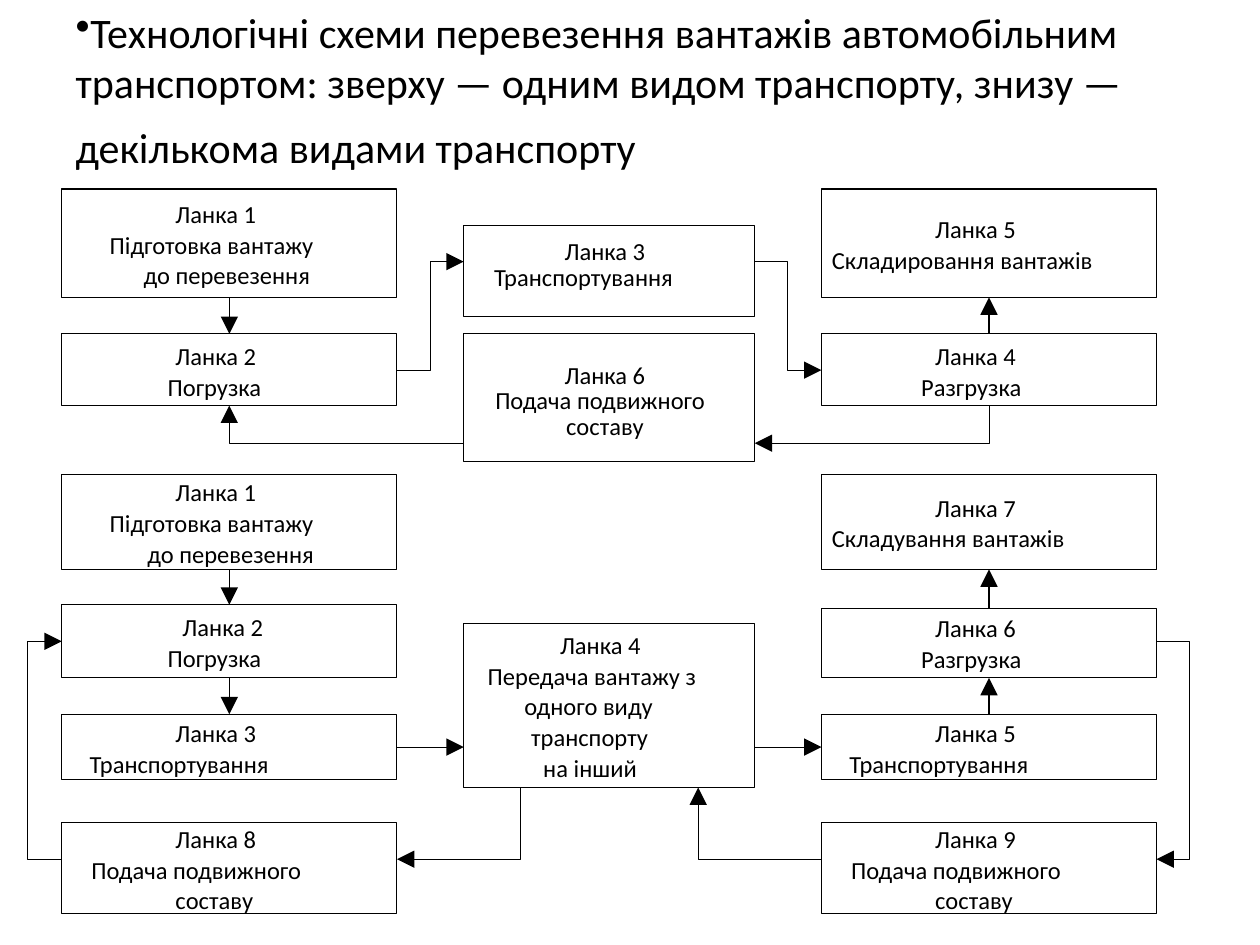
from lxml import etree
from pptx import Presentation
from pptx.dml.color import RGBColor
from pptx.enum.shapes import MSO_CONNECTOR, MSO_SHAPE
from pptx.enum.text import MSO_ANCHOR, MSO_AUTO_SIZE, PP_ALIGN
from pptx.oxml.ns import qn
from pptx.util import Pt

RECTANGLE = MSO_SHAPE.RECTANGLE
STRAIGHT = MSO_CONNECTOR.STRAIGHT
ANCHOR_TOP = MSO_ANCHOR.TOP
NO_AUTOFIT = MSO_AUTO_SIZE.NONE
LEFT_ALIGN = PP_ALIGN.LEFT
TOP, LEFT, BOTTOM, RIGHT = range(4)

COLORS = {"ink": "000000", "paper": "FFFFFF"}
FONT = "Calibri"
LINE_WIDTH = 0.6
NATURAL_PITCH = 17.1  # line height of 14 pt text

# Columns: left edge and width
COL_LEFT, COL_MIDDLE, COL_RIGHT = (35.3, 191.5), (265, 166.3), (469.4, 191.5)
# Rows: top edge and height
STORE, LOAD, CARRY = (108, 62), (190.8, 41), (129, 51.8)
RETURN = (190.8, 72.7)
STORE_2, LOAD_2, UNLOAD_2 = (271.4, 54), (345.6, 41.8), (347.8, 39.6)
CARRY_2, TRANSFER, SUPPLY_2 = (408.2, 37.4), (356.4, 93.6), (470.2, 51.8)


def write(paragraph, text, size=14, color="ink", indent=0, hanging=0, pitch=None):
    """Add a formatted run and set the paragraph's indents and line pitch."""
    run = paragraph.add_run()
    run.text = text
    run.font.name, run.font.size = FONT, Pt(size)
    run.font.color.rgb = RGBColor.from_string(COLORS[color])
    paragraph.alignment = LEFT_ALIGN
    properties = paragraph._p.get_or_add_pPr()
    properties.set("marL", str(Pt(indent)))
    properties.set("indent", str(Pt(-hanging)))
    if pitch:
        paragraph.line_spacing = Pt(pitch)


class Scheme:
    def __init__(self, slide):
        self.slide = slide
        self.ink = RGBColor.from_string(COLORS["ink"])
        self.paper = RGBColor.from_string(COLORS["paper"])

    def title(self, text):
        holder = self.slide.shapes.title
        holder.left, holder.top, holder.width, holder.height = Pt(36), Pt(0), Pt(648), Pt(108)
        frame = holder.text_frame
        frame.word_wrap, frame.auto_size = True, NO_AUTOFIT
        frame.vertical_anchor = ANCHOR_TOP
        paragraph = frame.paragraphs[0]
        write(paragraph, text, size=24, hanging=27)
        write(paragraph, " ", size=32, hanging=27)
        bullet = etree.SubElement(paragraph._p.pPr, qn("a:buChar"))
        bullet.set("char", "•")

    def stage(self, column, row, text_top, lines, pitch=17.5):
        """Draw a box; lines holds (text, indent) pairs."""
        (left, width), (top, height) = column, row
        box = self.slide.shapes.add_shape(RECTANGLE, Pt(left), Pt(top), Pt(width), Pt(height))
        box.shadow.inherit = False
        box.fill.solid()
        box.fill.fore_color.rgb = self.paper
        self.stroke(box.line)
        frame = box.text_frame
        frame.word_wrap, frame.vertical_anchor = True, ANCHOR_TOP
        frame.margin_left = frame.margin_right = frame.margin_bottom = 0
        frame.margin_top = Pt(text_top + max(0, NATURAL_PITCH - pitch))
        for number, (text, indent) in enumerate(lines):
            paragraph = frame.add_paragraph() if number else frame.paragraphs[0]
            write(paragraph, text, indent=indent, pitch=pitch)
        return box

    def stroke(self, line, arrow=False):
        line.color.rgb, line.width = self.ink, Pt(LINE_WIDTH)
        if arrow:
            head = etree.SubElement(line._get_or_add_ln(), qn("a:tailEnd"))
            for key, value in (("type", "triangle"), ("w", "lg"), ("len", "lg")):
                head.set(key, value)

    def arrow(self, start, end, source=None, target=None):
        """Draw a straight arrow; source and target are (box, side) pairs."""
        link = self.slide.shapes.add_connector(STRAIGHT, *map(Pt, start + end))
        if source:
            link.begin_connect(*source)
        if target:
            link.end_connect(*target)
        self.stroke(link.line, arrow=True)
        etree.SubElement(link._element.spPr, qn("a:effectLst"))

    def vertical_arrow(self, source, target):
        down = source.top < target.top
        sides = (BOTTOM, TOP) if down else (TOP, BOTTOM)
        self.arrow((0, 0), (0, 0), (source, sides[0]), (target, sides[1]))

    def route(self, *points):
        """Draw an arrow that turns corners at the given points."""
        corners = [(Pt(x), Pt(y)) for x, y in points]
        builder = self.slide.shapes.build_freeform(*corners[0])
        builder.add_line_segments(corners[1:], close=False)
        path_shape = builder.convert_to_shape()
        path_shape.shadow.inherit = False
        path_shape.fill.background()
        self.stroke(path_shape.line, arrow=True)


def single_transport(scheme):
    prepare = scheme.stage(COL_LEFT, STORE, 5, [
        ("Ланка 1", 65), ("Підготовка вантажу", 27.4), ("до перевезення", 46.8)])
    load = scheme.stage(COL_LEFT, LOAD, 3.6, [("Ланка 2", 65), ("Погрузка", 60.5)])
    scheme.stage(COL_MIDDLE, CARRY, 5.8, [("Ланка 3", 57.6), ("Транспортування", 17.3)], pitch=14.8)
    unload = scheme.stage(COL_RIGHT, LOAD, 3.6, [("Ланка 4", 65), ("Разгрузка", 57)])
    store = scheme.stage(COL_RIGHT, STORE, 13.7, [("Ланка 5", 65), ("Складировання вантажів", 6)])
    scheme.stage(COL_MIDDLE, RETURN, 14.4, [
        ("Ланка 6", 57.6), ("Подача подвижного", 18), ("составу", 58.5)], pitch=14.8)

    scheme.vertical_arrow(prepare, load)
    scheme.vertical_arrow(unload, store)
    scheme.route((226.8, 211.5), (246, 211.5), (246, 149.5), (265, 149.5))
    scheme.route((431.3, 149.5), (450, 149.5), (450, 211.5), (469.4, 211.5))
    scheme.route((565.2, 231.8), (565.2, 253.3), (431.3, 253.3))
    scheme.route((265, 253.3), (131, 253.3), (131, 231.8))


def several_transports(scheme):
    supply = [("Подача подвижного", 17), ("составу", 65)]
    carry = ("Транспортування", 16)
    prepare = scheme.stage(COL_LEFT, STORE_2, 0.7, [
        ("Ланка 1", 65), ("Підготовка вантажу", 27.4), ("до перевезення", 49)])
    load = scheme.stage(COL_LEFT, LOAD_2, 3.6, [("Ланка 2", 69), ("Погрузка", 60.5)])
    carry_in = scheme.stage(COL_LEFT, CARRY_2, 1.4, [("Ланка 3", 65), carry])
    scheme.stage(COL_MIDDLE, TRANSFER, 3, [
        ("Ланка 4", 55), ("Передача вантажу з", 13.7), ("одного виду", 34.6),
        ("транспорту", 38.5), ("на інший", 45.4)])
    carry_out = scheme.stage(COL_RIGHT, CARRY_2, 1.4, [("Ланка 5", 65), carry])
    unload = scheme.stage(COL_RIGHT, UNLOAD_2, 2, [("Ланка 6", 65), ("Разгрузка", 57)])
    store = scheme.stage(COL_RIGHT, STORE_2, 9.4, [("Ланка 7", 65), ("Складування вантажів", 6)])
    scheme.stage(COL_LEFT, SUPPLY_2, 0, [("Ланка 8", 65)] + supply)
    scheme.stage(COL_RIGHT, SUPPLY_2, 0, [("Ланка 9", 65)] + supply)

    for source, target in ((prepare, load), (load, carry_in), (carry_out, unload), (unload, store)):
        scheme.vertical_arrow(source, target)
    carry_level = CARRY_2[0] + CARRY_2[1] / 2
    scheme.arrow((226.8, carry_level), (265, carry_level), source=(carry_in, RIGHT))
    scheme.arrow((431.3, carry_level), (469.4, carry_level), target=(carry_out, LEFT))
    scheme.route((660.9, 366.5), (679.7, 366.5), (679.7, 491), (660.9, 491))
    scheme.route((469.4, 491), (399, 491), (399, 450))
    scheme.route((297.4, 450), (297.4, 491), (226.8, 491))
    scheme.route((35.3, 491), (16, 491), (16, 366.5), (35.3, 366.5))


def main():
    deck = Presentation()
    deck.slide_width, deck.slide_height = Pt(720), Pt(540)
    scheme = Scheme(deck.slides.add_slide(deck.slide_layouts[5]))
    scheme.title("Технологічні схеми перевезення вантажів автомобільним транспортом: "
                 "зверху — одним видом транспорту, знизу — декількома видами транспорту")
    single_transport(scheme)
    several_transports(scheme)
    deck.save("out.pptx")


if __name__ == "__main__":
    main()
